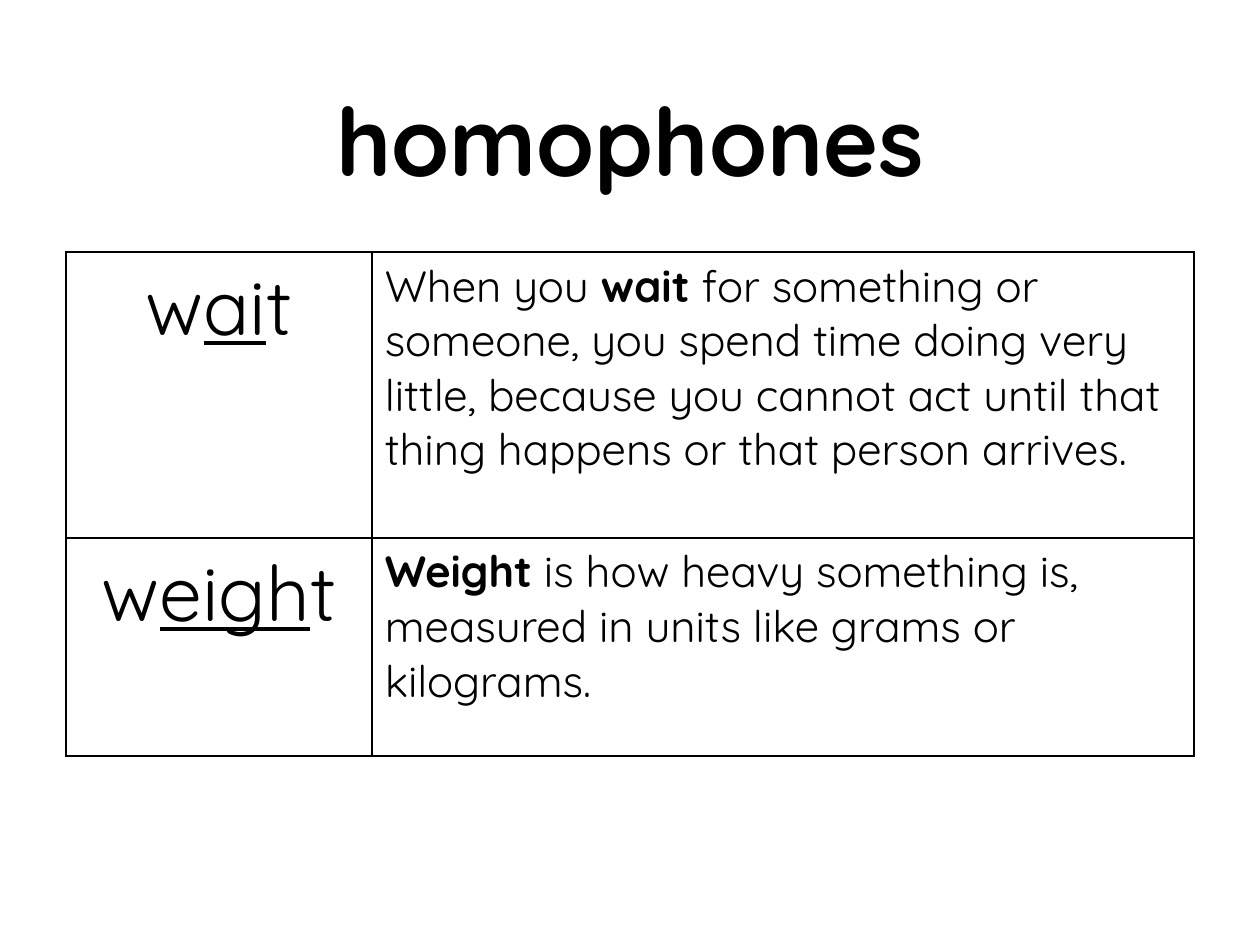
from lxml import etree
from pptx import Presentation
from pptx.dml.color import RGBColor
from pptx.enum.text import MSO_ANCHOR, PP_ALIGN
from pptx.oxml.ns import qn
from pptx.util import Pt

CENTER, LEFT, TOP = PP_ALIGN.CENTER, PP_ALIGN.LEFT, MSO_ANCHOR.TOP

# Content: each span is (text, style), style being "", "b" (bold) or "u" (underline)
TITLE = [("homophones", "b")]
ROWS = [
    ([("w", ""), ("ai", "u"), ("t", "")],
     [("When you ", ""), ("wait", "b"),
      (" for something or someone, you spend time doing very little, because "
       "you cannot act until that thing happens or that person arrives.", "")]),
    ([("w", ""), ("eigh", "u"), ("t", "")],
     [("Weight", "b"),
      (" is how heavy something is, measured in units like grams or kilograms.", "")]),
]

THEME = {"font": "Quicksand", "ink": "000000", "title": 54, "word": 44,
         "meaning": 25, "border": 1}

# Layout in points
PAGE_WIDTH, PAGE_HEIGHT = 720, 540
TITLE_TOP, TITLE_HEIGHT = 50.4, 104.4
TABLE_LEFT, TABLE_TOP = 37.7, 144
COLUMN_WIDTHS = (175, 469.6)
ROW_HEIGHTS = (163.4, 124.6)


def write_spans(para, spans, size, align):
    para.alignment = align
    for text, style in spans:
        span = para.add_run()
        span.text = text
        span.font.name = THEME["font"]
        span.font.size = Pt(size)
        span.font.bold = style == "b"
        span.font.underline = style == "u"
        span.font.color.rgb = RGBColor.from_string(THEME["ink"])


def add_borders(cell):
    properties = cell._tc.get_or_add_tcPr()
    for position, side in enumerate(("a:lnL", "a:lnR", "a:lnT", "a:lnB")):
        line = etree.Element(qn(side), w=str(Pt(THEME["border"])))
        fill = etree.SubElement(line, qn("a:solidFill"))
        etree.SubElement(fill, qn("a:srgbClr"), val=THEME["ink"])
        properties.insert(position, line)


deck = Presentation()
deck.slide_width, deck.slide_height = Pt(PAGE_WIDTH), Pt(PAGE_HEIGHT)
page = deck.slides.add_slide(deck.slide_layouts[6])

# Table of words and meanings
frame = page.shapes.add_table(len(ROWS), len(COLUMN_WIDTHS), Pt(TABLE_LEFT), Pt(TABLE_TOP),
                              Pt(sum(COLUMN_WIDTHS)), Pt(sum(ROW_HEIGHTS)))
table = frame.table
table.first_row = table.horz_banding = False
for column, width in zip(table.columns, COLUMN_WIDTHS):
    column.width = Pt(width)
for row, height, contents in zip(table.rows, ROW_HEIGHTS, ROWS):
    row.height = Pt(height)
    for cell, spans, size, align in zip(row.cells, contents,
                                        (THEME["word"], THEME["meaning"]), (CENTER, LEFT)):
        cell.fill.background()
        cell.vertical_anchor = TOP
        add_borders(cell)
        write_spans(cell.text_frame.paragraphs[0], spans, size, align)

# Title
box = page.shapes.add_textbox(0, Pt(TITLE_TOP), Pt(PAGE_WIDTH), Pt(TITLE_HEIGHT))
box.text_frame.word_wrap = True
box.text_frame.vertical_anchor = TOP
heading = box.text_frame.paragraphs[0]
heading.line_spacing = 0.9
write_spans(heading, TITLE, THEME["title"], CENTER)

deck.save("out.pptx")
